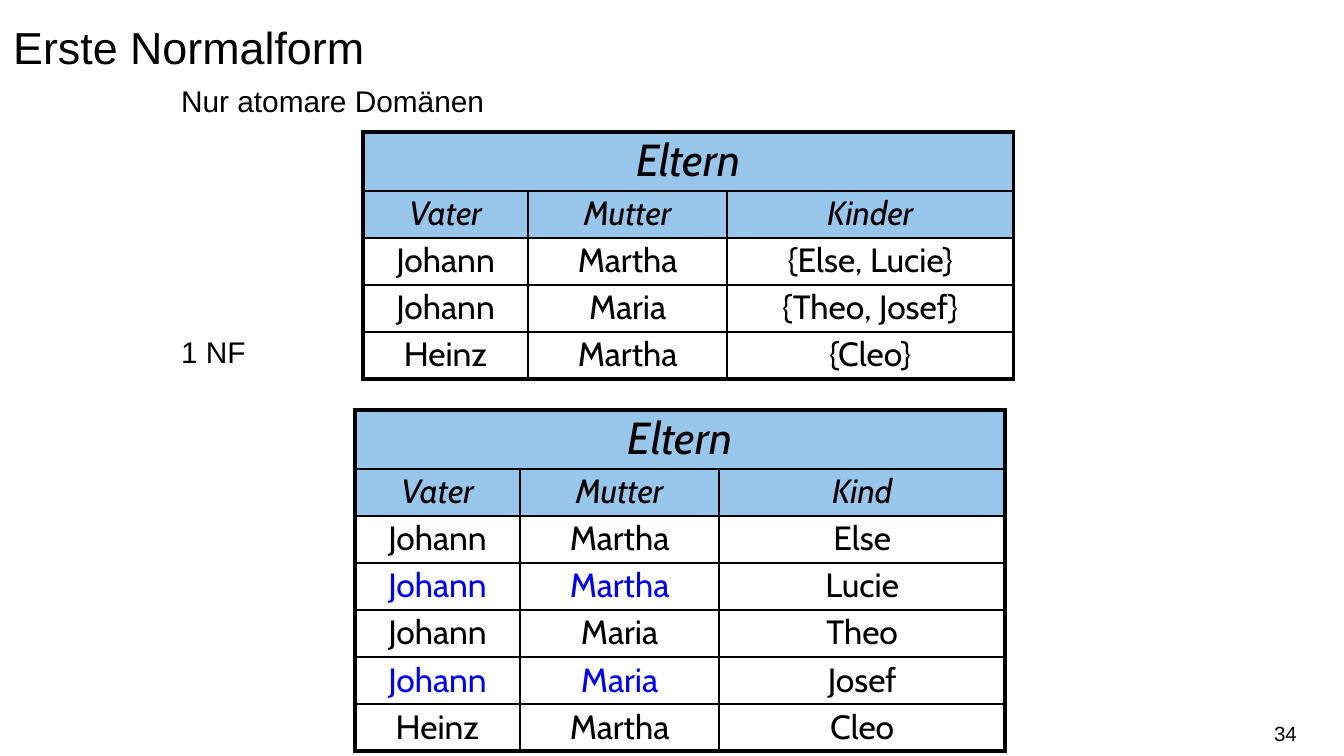
from lxml import etree
from pptx import Presentation
from pptx import util as u
from pptx.dml.color import RGBColor
from pptx.enum import text
from pptx.oxml.ns import qn

PX = 9144  # 100 px to the inch
SLIDE_SIZE = (1000, 562.5)  # 16:9
COLORS = {"text": "000000", "repeat": "0000FF", "header": "98C6EA", "border": "000000"}
BODY_FONT, TABLE_FONT = "Arial", "Cabin"

TITLE = "Erste Normalform"
BODY = ["Nur atomare Domänen", "1 NF"]
BODY_GAP = 115.5  # points between the two body paragraphs
PAGE_NUMBER = "34"

COLUMN_WIDTHS = [123, 148, 213]
TITLE_ROW, ROW = 44, 35
THICK, THIN = 2.25, 1

TABLES = [
    {
        "at": (270, 98),
        "name": "Eltern",
        "columns": ("Vater", "Mutter", "Kinder"),
        "rows": [
            ("Johann", "Martha", "{Else, Lucie}"),
            ("Johann", "Maria", "{Theo, Josef}"),
            ("Heinz", "Martha", "{Cleo}"),
        ],
    },
    {
        "at": (264, 305),
        "name": "Eltern",
        "columns": ("Vater", "Mutter", "Kind"),
        "rows": [
            ("Johann", "Martha", "Else"),
            ("Johann", "Martha", "Lucie"),
            ("Johann", "Maria", "Theo"),
            ("Johann", "Maria", "Josef"),
            ("Heinz", "Martha", "Cleo"),
        ],
    },
]


def px(value):
    return u.Emu(int(value * PX))


def set_margins(target, left, top, right, bottom):
    target.margin_left, target.margin_top = px(left), px(top)
    target.margin_right, target.margin_bottom = px(right), px(bottom)


def style(paragraph, size, font, color="text", italic=False):
    for run in paragraph.runs:
        run.font.size = u.Pt(size)
        run.font.name = font
        run.font.italic = italic
        run.font.color.rgb = RGBColor.from_string(COLORS[color])


def add_text(slide, box, lines, size, margins):
    frame = slide.shapes.add_textbox(*map(px, box)).text_frame
    frame.word_wrap = True
    set_margins(frame, *margins)
    frame.text = "\n".join(lines)
    for paragraph in frame.paragraphs:
        style(paragraph, size, BODY_FONT)
    return frame


def set_borders(cell, widths):
    properties = cell._tc.get_or_add_tcPr()
    for side in "LRTB":
        line = etree.SubElement(properties, qn(f"a:ln{side}"), w=str(u.Pt(widths[side])))
        fill = etree.SubElement(line, qn("a:solidFill"))
        etree.SubElement(fill, qn("a:srgbClr"), val=COLORS["border"])


def add_relation(slide, relation):
    """Draw a relation; parents already listed in an earlier row are highlighted."""
    rows = [(relation["name"], "", ""), relation["columns"], *relation["rows"]]
    heights = [TITLE_ROW] + [ROW] * (len(rows) - 1)
    size = (sum(COLUMN_WIDTHS), sum(heights))
    table = slide.shapes.add_table(
        len(rows), len(COLUMN_WIDTHS), *map(px, relation["at"] + size)).table
    table.first_row = table.horz_banding = False
    for column, width in zip(table.columns, COLUMN_WIDTHS):
        column.width = px(width)
    for row, height in zip(table.rows, heights):
        row.height = px(height)
    table.cell(0, 0).merge(table.cell(0, len(COLUMN_WIDTHS) - 1))

    last_row, last_column = len(rows) - 1, len(COLUMN_WIDTHS) - 1
    parents_seen = set()
    for r, values in enumerate(rows):
        repeated = values[:2] in parents_seen
        parents_seen.add(values[:2])
        for c, value in enumerate(values):
            cell = table.cell(r, c)
            set_margins(cell, 7, 4, 7, 3)
            set_borders(cell, {
                "L": THICK if c == 0 else THIN,
                "R": THICK if c == last_column or r == 0 else THIN,
                "T": THICK if r == 0 else THIN,
                "B": THICK if r == last_row else THIN,
            })
            if r < 2:
                cell.fill.solid()
                cell.fill.fore_color.rgb = RGBColor.from_string(COLORS["header"])
            else:
                cell.fill.background()
            if not value:
                continue
            cell.text_frame.text = value
            paragraph = cell.text_frame.paragraphs[0]
            paragraph.alignment = text.PP_ALIGN.CENTER
            paragraph.line_spacing = 0.9
            color = "repeat" if repeated and c < 2 else "text"
            style(paragraph, 24 if r == 0 else 18, TABLE_FONT, color, italic=r < 2)


def main():
    presentation = Presentation()
    presentation.slide_width, presentation.slide_height = map(px, SLIDE_SIZE)
    slide = presentation.slides.add_slide(presentation.slide_layouts[6])

    add_text(slide, (0, 0, 1000, 94), [TITLE], 24, (10, 14.5, 10, 5))
    body = add_text(slide, (125, 57, 750, 468), BODY, 16, (10, 4.5, 10, 5))
    body.paragraphs[1].space_before = u.Pt(BODY_GAP)

    for relation in TABLES:
        add_relation(slide, relation)

    number = add_text(slide, (741, 531, 224, 30), [PAGE_NUMBER], 11, (0, 5, 0, 5))
    number.vertical_anchor = text.MSO_ANCHOR.MIDDLE
    number.paragraphs[0].alignment = text.PP_ALIGN.RIGHT

    presentation.save("out.pptx")


if __name__ == "__main__":
    main()
